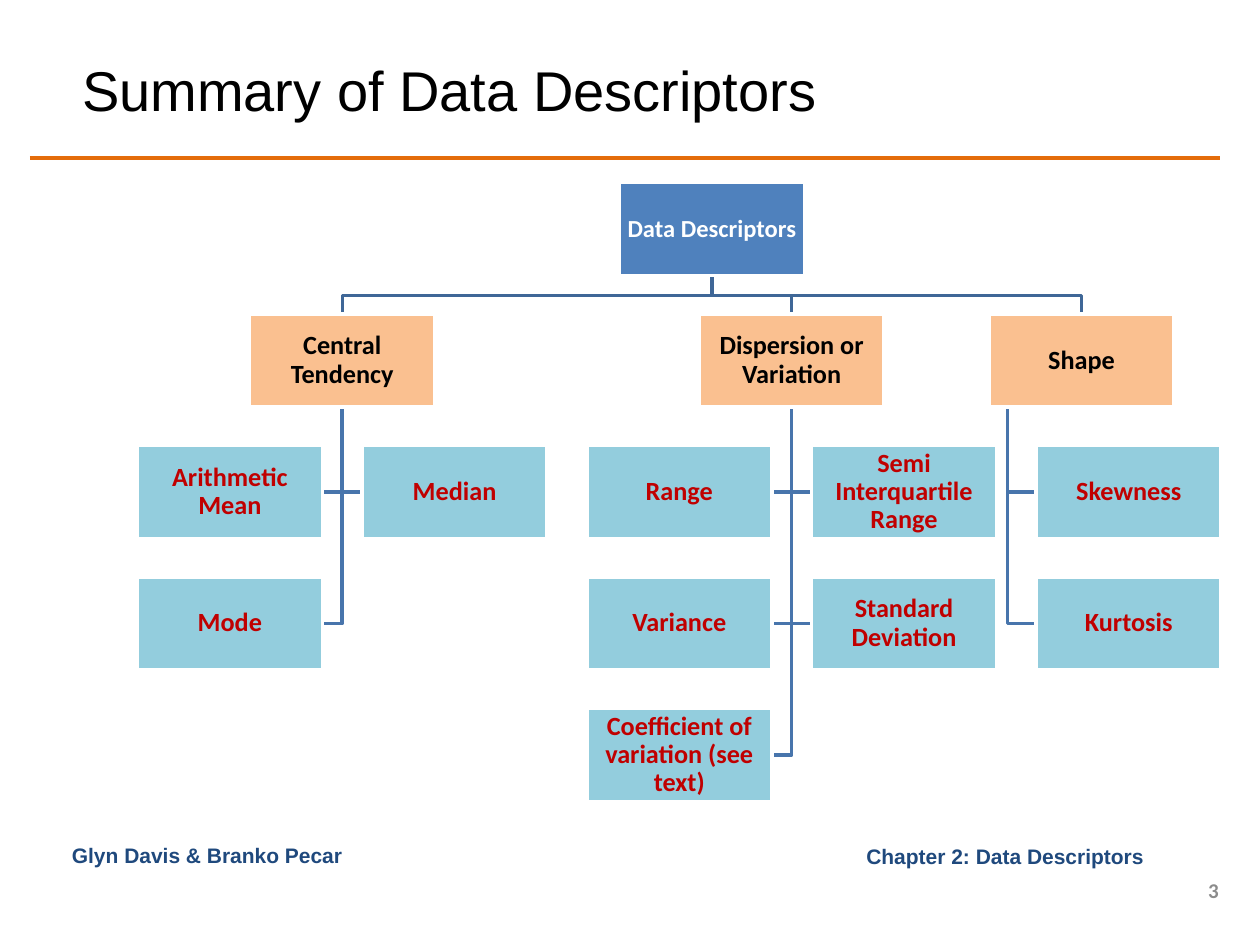
"""Build a slide with a tree of data descriptors."""
from lxml import etree
from pptx import Presentation
from pptx.dml.color import RGBColor
from pptx.enum.shapes import MSO_CONNECTOR, MSO_SHAPE
from pptx.enum.text import MSO_ANCHOR, PP_ALIGN
from pptx.oxml.ns import qn
from pptx.util import Cm, Pt

LEFT, CENTER, RIGHT = PP_ALIGN.LEFT, PP_ALIGN.CENTER, PP_ALIGN.RIGHT
TOP, MIDDLE = MSO_ANCHOR.TOP, MSO_ANCHOR.MIDDLE
RECTANGLE, STRAIGHT = MSO_SHAPE.RECTANGLE, MSO_CONNECTOR.STRAIGHT
BOX_WIDTH, BOX_HEIGHT = 3.73, 1.88
COLUMN_LEFT, COLUMN_STEP = 2.77, 4.53
ROW_TOP, ROW_STEP = 3.68, 2.65


def colour(value):
    """Turn a hex string into a colour."""
    return RGBColor.from_string(value)


def write(shape, text, size, font, ink, align, anchor=MIDDLE, bold=True):
    """Put one formatted run into a shape and return its paragraph."""
    frame = shape.text_frame
    frame.word_wrap = True
    frame.vertical_anchor = anchor
    para = frame.paragraphs[0]
    para.alignment = align
    span = para.add_run()
    span.text = text
    span.font.size = Pt(size)
    span.font.name = font
    span.font.bold = bold
    span.font.color.rgb = colour(ink)
    return para


deck = Presentation()
deck.slide_width, deck.slide_height = Cm(25.4), Cm(19.05)
page = deck.slides.add_slide(deck.slide_layouts[5])

rule = page.shapes.add_connector(STRAIGHT, Cm(0.6), Cm(3.18), Cm(24.6), Cm(3.18))
rule.line.color.rgb = colour("E46C0A")
rule.line.width = Pt(2.25)
etree.SubElement(rule._element.spPr, qn("a:effectLst"))

title = page.shapes.title
title.left, title.top, title.width, title.height = Cm(1.4), Cm(0.8), Cm(19.25), Cm(1.98)
write(title, "Summary of Data Descriptors", 32, "Arial", "000000", LEFT, bold=False)

footers = [
    ("Chapter 2: Data Descriptors ", 13.9, 16.87, 9.53, 0.78, "Arial", "1F497D", RIGHT, MIDDLE),
    ("3", 23.62, 17.65, 1.2, 0.6, "Calibri", "8C8C8C", RIGHT, MIDDLE),
    ("Glyn Davis & Branko Pecar", 1.2, 16.87, 7.54, 0.78, "Arial", "1F497D", LEFT, TOP),
]
for text, left, top, width, height, font, ink, align, anchor in footers:
    box = page.shapes.add_textbox(Cm(left), Cm(top), Cm(width), Cm(height))
    write(box, text, 12, font, ink, align, anchor)

columns = [COLUMN_LEFT + COLUMN_STEP * index for index in range(5)]
rows = [ROW_TOP + ROW_STEP * index for index in range(5)]
branches = [
    ("Central Tendency", (columns[0] + columns[1]) / 2, BOX_WIDTH / 2,
     [("Arithmetic Mean", 0, 2), ("Median", 1, 2), ("Mode", 0, 3)]),
    ("Dispersion or Variation", (columns[2] + columns[3]) / 2, BOX_WIDTH / 2,
     [("Range", 2, 2), ("Semi Interquartile Range", 3, 2), ("Variance", 2, 3),
      ("Standard Deviation", 3, 3), ("Coefficient of variation (see text)", 2, 4)]),
    ("Shape", 19.94, 0.37, [("Skewness", 4, 2), ("Kurtosis", 4, 3)]),
]

root_left = (branches[0][1] + branches[-1][1]) / 2
root_x = root_left + BOX_WIDTH / 2
root_bottom = rows[0] + BOX_HEIGHT
fork_y = root_bottom + 0.4
boxes = [("Data Descriptors", root_left, rows[0], 14, "4F81BD", "FFFFFF")]
links = []
for name, left, trunk_offset, leaves in branches:
    middle, trunk = left + BOX_WIDTH / 2, left + trunk_offset
    boxes.append((name, left, rows[1], 15, "FAC090", "000000"))
    links.append(("3F6797", [(root_x, root_bottom), (root_x, fork_y),
                             (middle, fork_y), (middle, rows[1])]))
    for leaf, column, row in leaves:
        leaf_left, leaf_y = columns[column], rows[row] + BOX_HEIGHT / 2
        edge = leaf_left if leaf_left > trunk else leaf_left + BOX_WIDTH
        boxes.append((leaf, leaf_left, rows[row], 15, "93CDDD", "C00000"))
        links.append(("4875AC", [(trunk, rows[1] + BOX_HEIGHT), (trunk, leaf_y), (edge, leaf_y)]))

for ink, points in links:
    corners = [(Cm(x), Cm(y)) for x, y in points]
    builder = page.shapes.build_freeform(*corners[0])
    builder.add_line_segments(corners[1:], close=False)
    link = builder.convert_to_shape()
    link.shadow.inherit = False
    link.fill.background()
    link.line.color.rgb = colour(ink)
    link.line.width = Pt(2)

for text, left, top, size, fill, ink in boxes:
    box = page.shapes.add_shape(RECTANGLE, Cm(left), Cm(top), Cm(BOX_WIDTH), Cm(BOX_HEIGHT))
    box.shadow.inherit = False
    box.fill.solid()
    box.fill.fore_color.rgb = colour(fill)
    box.line.color.rgb = colour("FFFFFF")
    box.line.width = Pt(2)
    frame = box.text_frame
    frame.margin_left = frame.margin_right = frame.margin_top = frame.margin_bottom = Cm(0.03)
    write(box, text, size, "Calibri", ink, CENTER).line_spacing = 0.9

deck.save("out.pptx")
